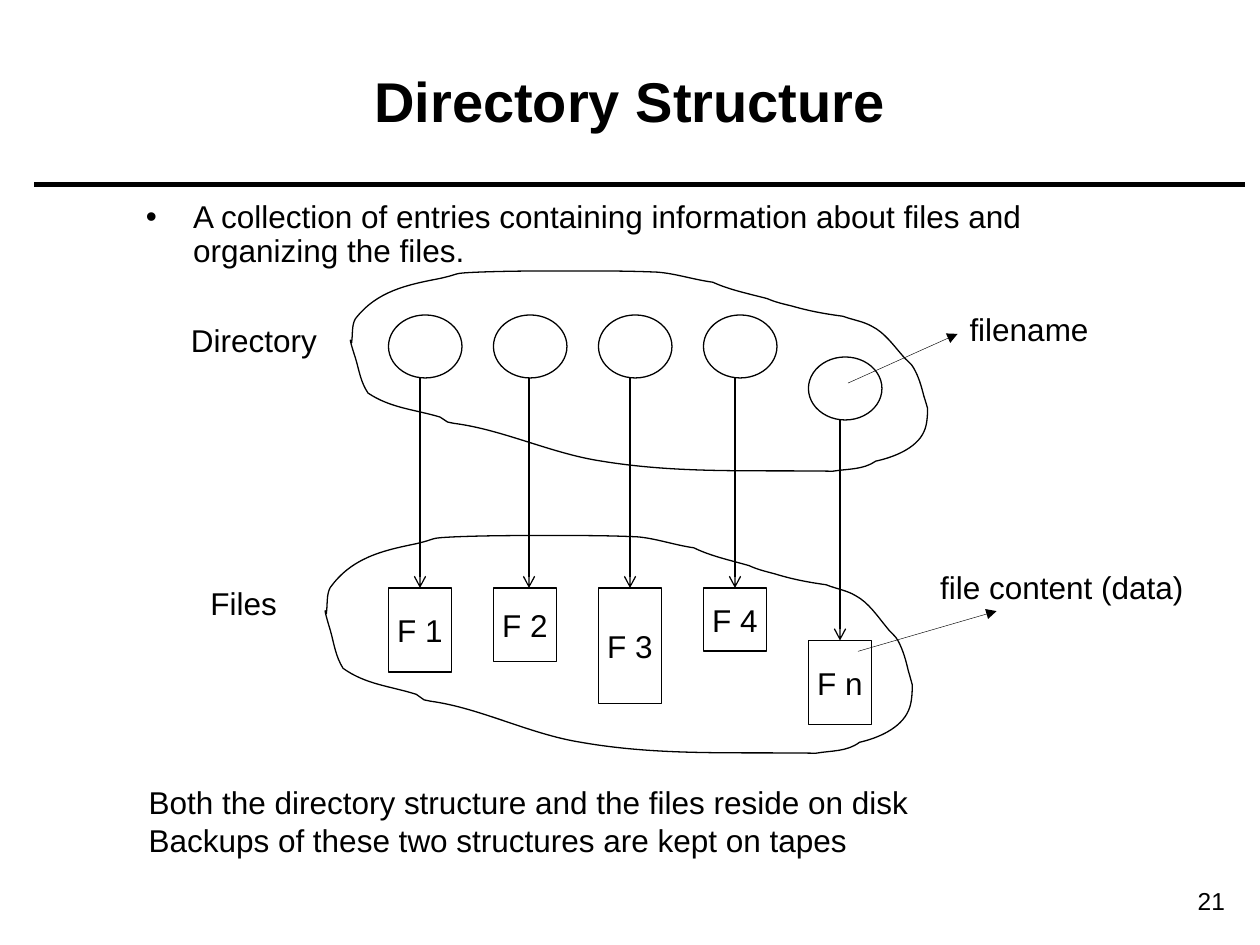
from lxml import etree
from pptx import Presentation
from pptx.dml.color import RGBColor
from pptx.enum.shapes import MSO_CONNECTOR, MSO_SHAPE
from pptx.enum.text import MSO_ANCHOR, MSO_AUTO_SIZE, PP_ALIGN
from pptx.oxml.ns import qn
from pptx.util import Pt

BLACK = RGBColor(0, 0, 0)
WHITE = RGBColor(255, 255, 255)
STRAIGHT = MSO_CONNECTOR.STRAIGHT
OVAL, RECTANGLE = MSO_SHAPE.OVAL, MSO_SHAPE.RECTANGLE
LEFT, CENTER, RIGHT = PP_ALIGN.LEFT, PP_ALIGN.CENTER, PP_ALIGN.RIGHT
TOP, MIDDLE = MSO_ANCHOR.TOP, MSO_ANCHOR.MIDDLE
FONT = "Arial"

TITLE = "Directory Structure"
DEFINITION = ("A collection of entries containing information about files "
              "and organizing the files.")
REMARKS = ("Both the directory structure and the files reside on disk\n"
           "Backups of these two structures are kept on tapes")
PAGE = "21"

# file name, entry top, file top, file height, arrow offset from the left
FILES = [
    ("F 1", 180, 336, 48, 18),
    ("F 2", 180, 336, 42, 20.3),
    ("F 3", 180, 336, 66, 18),
    ("F 4", 180, 336, 36, 18),
    ("F n", 204, 366, 48, 18),
]
FIRST_LEFT, PITCH = 222, 60
ENTRY_WIDTH, ENTRY_HEIGHT, FILE_WIDTH = 42, 36, 36

# text, left, top, width, height
LABELS = [
    ("Directory", 101.9, 180, 86.4, 28.8),
    ("Files", 113, 330.2, 52.6, 28.8),
    ("filename", 546, 173.5, 84, 28.8),
    ("file content (data)", 529.7, 321.1, 154, 28.8),
]
POINTERS = [(484.6, 218.9, 547.2, 190.8), (490.3, 372.2, 569.5, 349.2)]

# left, top, width, height of the directory cloud and the files cloud
CLOUDS = [(200.2, 154.8, 329.8, 115.9), (185.8, 306, 335.5, 126)]
CLOUD_LEFT, CLOUD_TOP, CLOUD_WIDTH, CLOUD_HEIGHT = 278, 215, 457, 161
CLOUD_START = (279, 272)
# each curve: two control points and an end point
CLOUD_CURVES = [
    (280, 265, 279, 258, 282, 253), (299, 231, 323, 226, 349, 221),
    (367, 217, 357, 217, 379, 216), (404, 215, 429, 215, 455, 215),
    (477, 215, 499, 215, 521, 216), (535, 217, 550, 222, 565, 224),
    (578, 230, 593, 233, 608, 237), (615, 240, 620, 241, 628, 243),
    (642, 247, 653, 249, 668, 251), (676, 254, 684, 255, 691, 259),
    (701, 264, 708, 274, 715, 282), (718, 286, 722, 288, 724, 292),
    (728, 299, 730, 306, 732, 314), (733, 317, 735, 324, 735, 324),
    (735, 328, 735, 337, 732, 343), (726, 356, 708, 363, 694, 366),
    (684, 373, 672, 372, 660, 374), (596, 373, 538, 376, 477, 366),
    (437, 360, 399, 341, 360, 336), (358, 336, 357, 335, 355, 335),
    (353, 334, 351, 332, 349, 331), (329, 325, 310, 324, 292, 312),
    (286, 303, 285, 294, 282, 284), (282, 284, 278, 272, 278, 270),
    (278, 269, 279, 271, 279, 272),
]


def write(frame, text, size=18, bold=False, align=LEFT, anchor=TOP, wrap=True):
    frame.word_wrap = wrap
    frame.vertical_anchor = anchor
    frame.text = text
    for paragraph in frame.paragraphs:
        paragraph.alignment = align
        font = paragraph.font
        font.name, font.size, font.bold = FONT, Pt(size), bold
        font.color.rgb = BLACK


def add_text(slide, text, box, **style):
    frame = slide.shapes.add_textbox(*map(Pt, box)).text_frame
    write(frame, text, **style)
    return frame


def outline(shape, fill=None):
    shape.shadow.inherit = False
    if fill is None:
        shape.fill.background()
    else:
        shape.fill.solid()
        shape.fill.fore_color.rgb = fill
    shape.line.color.rgb = BLACK
    shape.line.width = Pt(0.75)


def add_box(slide, kind, *box):
    shape = slide.shapes.add_shape(kind, *map(Pt, box))
    outline(shape, WHITE)
    return shape


def add_line(slide, ends, width, head=None):
    line = slide.shapes.add_connector(STRAIGHT, *map(Pt, ends))
    line.line.color.rgb = BLACK
    line.line.width = Pt(width)
    if head:
        etree.SubElement(line.line._get_or_add_ln(), qn("a:tailEnd"), type=head)
    etree.SubElement(line._element.spPr, qn("a:effectLst"))


def add_cloud(slide, left, top, width, height):
    def place(x, y):
        return (Pt(left + (x - CLOUD_LEFT) * width / CLOUD_WIDTH),
                Pt(top + (y - CLOUD_TOP) * height / CLOUD_HEIGHT))

    builder = slide.shapes.build_freeform(*place(*CLOUD_START))
    builder.add_line_segments(
        [place(*curve[i:i + 2]) for curve in CLOUD_CURVES for i in (0, 2, 4)],
        close=True)
    cloud = builder.convert_to_shape()
    outline(cloud)
    bend(cloud)


def bend(shape):
    """Turn every three line segments into one cubic curve."""
    segments = list(shape._element.iter(qn("a:lnTo")))
    for first, second, third in zip(*[iter(segments)] * 3):
        curve = etree.Element(qn("a:cubicBezTo"))
        first.addprevious(curve)
        for segment in (first, second, third):
            curve.append(segment[0])
            segment.getparent().remove(segment)


def add_definition(slide):
    frame = add_text(slide, DEFINITION, (76.3, 111.6, 580.3, 28))
    paragraph = frame.paragraphs[0]
    paragraph.line_spacing = 0.9
    paragraph.space_before = Pt(3.6)
    properties = paragraph._p.get_or_add_pPr()
    properties.set("marL", str(Pt(27)))
    properties.set("indent", str(-Pt(27)))
    bullet_font = etree.Element(qn("a:buFont"), typeface=FONT)
    properties.find(qn("a:spcBef")).addnext(bullet_font)
    bullet_font.addnext(etree.Element(qn("a:buChar"), char="•"))


def main():
    deck = Presentation()
    deck.slide_width, deck.slide_height = Pt(720), Pt(540)
    slide = deck.slides.add_slide(deck.slide_layouts[5])

    add_line(slide, (19.6, 105.6, 711.4, 105.6), 3)
    add_text(slide, PAGE, (632.2, 502.6, 74.9, 24.5), size=14, align=RIGHT)
    title = slide.shapes.title
    title.left, title.top, title.width, title.height = map(Pt, (25.4, 12.4, 669, 90))
    write(title.text_frame, TITLE, size=32, bold=True, align=CENTER, anchor=MIDDLE)
    add_definition(slide)

    for index, (name, entry_top, file_top, height, offset) in enumerate(FILES):
        left = FIRST_LEFT + index * PITCH
        add_box(slide, OVAL, left, entry_top, ENTRY_WIDTH, ENTRY_HEIGHT)
        file = add_box(slide, RECTANGLE, left, file_top, FILE_WIDTH, height)
        write(file.text_frame, name, align=CENTER, anchor=MIDDLE, wrap=False)
        x = left + offset
        add_line(slide, (x, entry_top + ENTRY_HEIGHT, x, file_top), 0.75, "arrow")

    for cloud in CLOUDS:
        add_cloud(slide, *cloud)
    for ends in POINTERS:
        add_line(slide, ends, 0.25, "triangle")
    for text, *box in LABELS:
        frame = add_text(slide, text, box, align=CENTER, anchor=MIDDLE, wrap=False)
        frame.auto_size = MSO_AUTO_SIZE.SHAPE_TO_FIT_TEXT
    add_text(slide, REMARKS, (77.8, 443.9, 553.7, 30.2))

    deck.save("out.pptx")


if __name__ == "__main__":
    main()
